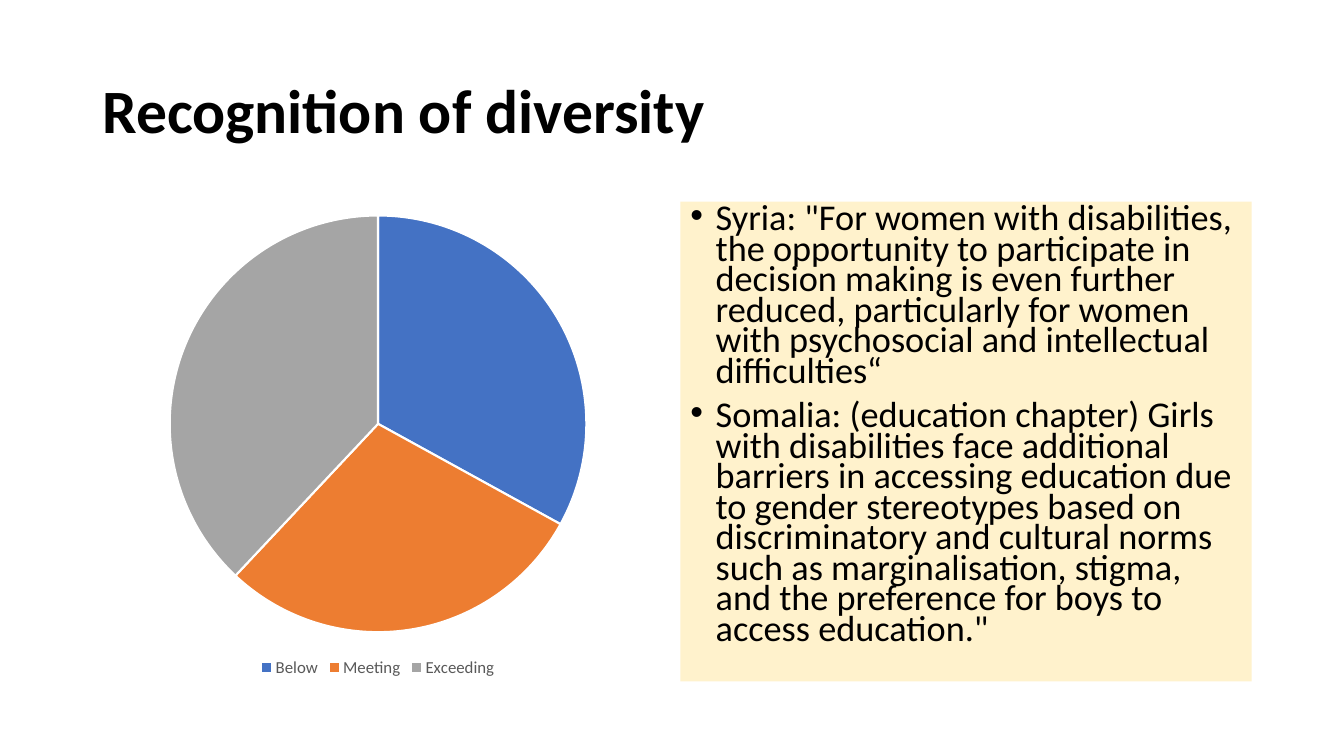
from lxml import etree
from pptx import Presentation
from pptx.chart.data import CategoryChartData
from pptx.dml.color import RGBColor
from pptx.enum.chart import XL_CHART_TYPE as ChartType, XL_LEGEND_POSITION as LegendPosition
from pptx.enum.shapes import MSO_SHAPE as Shape
from pptx.enum.text import MSO_ANCHOR as Anchor, PP_ALIGN as Align
from pptx.oxml.ns import qn
from pptx.util import Cm, Pt


def color(hex_code):
    return RGBColor.from_string(hex_code)


class SlideBuilder:
    font = "Calibri"
    ink = "000000"
    muted = "595959"
    panel = "FFF2CC"
    slice_edge = "FFFFFF"

    def __init__(self, slide):
        self.slide = slide

    def add_run(self, paragraph, text, size, bold=False):
        run = paragraph.add_run()
        run.text = text
        run.font.name = self.font
        run.font.size = Pt(size)
        run.font.bold = bold
        run.font.color.rgb = color(self.ink)

    def title(self, text, left, top, width, height):
        frame = self.slide.shapes.add_textbox(left, top, width, height).text_frame
        frame.word_wrap = True
        frame.vertical_anchor = Anchor.MIDDLE
        heading = frame.paragraphs[0]
        heading.line_spacing = 0.9
        self.add_run(heading, text, 44, bold=True)

    def pie(self, shares, left, top, width, height):
        data = CategoryChartData()
        data.categories = [name for name, _, _ in shares]
        data.add_series("Series 1", [value for _, value, _ in shares])
        chart = self.slide.shapes.add_chart(
            ChartType.PIE, left, top, width, height, data).chart
        chart.has_title = False
        chart.font.name = self.font
        chart.font.size = Pt(10)
        chart.plots[0].vary_by_categories = True
        for index, (_, _, fill) in enumerate(shares):
            wedge = chart.plots[0].series[0].points[index].format
            wedge.fill.solid()
            wedge.fill.fore_color.rgb = color(fill)
            wedge.line.color.rgb = color(self.slice_edge)
            wedge.line.width = Pt(1.5)
        chart.has_legend = True
        legend = chart.legend
        legend.position = LegendPosition.BOTTOM
        legend.include_in_layout = False
        legend.font.name = self.font
        legend.font.size = Pt(12)
        legend.font.color.rgb = color(self.muted)

    def bullet_panel(self, items, left, top, width, height):
        panel = self.slide.shapes.add_shape(Shape.RECTANGLE, left, top, width, height)
        panel.shadow.inherit = False
        panel.fill.solid()
        panel.fill.fore_color.rgb = color(self.panel)
        panel.line.fill.background()
        frame = panel.text_frame
        frame.word_wrap = True
        frame.vertical_anchor = Anchor.TOP
        for index, item in enumerate(items):
            entry = frame.add_paragraph() if index else frame.paragraphs[0]
            entry.alignment = Align.LEFT
            entry.line_spacing = 0.7
            entry.space_before = Pt(10)
            self.add_bullet(entry)
            self.add_run(entry, item, 25.9)

    def add_bullet(self, paragraph):
        indent = Cm(0.64)
        properties = paragraph._p.get_or_add_pPr()
        properties.set("marL", str(indent))
        properties.set("indent", str(-indent))
        etree.SubElement(properties, qn("a:buFont"), typeface="Arial")
        etree.SubElement(properties, qn("a:buChar"), char="•")


def main():
    deck = Presentation()
    deck.slide_width, deck.slide_height = Cm(33.87), Cm(19.05)
    builder = SlideBuilder(deck.slides.add_slide(deck.slide_layouts[6]))

    # Two equal columns under a full-width title
    margin, gap = Cm(2.33), Cm(0.42)
    content_width = deck.slide_width - 2 * margin
    column_width = (content_width - gap) // 2
    column_top, column_height = Cm(5.08), Cm(12.09)

    # Title
    builder.title("Recognition of diversity", margin, Cm(1.02), content_width, Cm(3.68))

    # Ratings
    ratings = [("Below", 33, "4472C4"), ("Meeting", 29, "ED7D31"), ("Exceeding", 38, "A5A5A5")]
    builder.pie(ratings, margin, column_top, column_width, column_height)

    # Country examples
    examples = [
        'Syria: "For women with disabilities, the opportunity to participate in '
        'decision making is even further reduced, particularly for women with '
        'psychosocial and intellectual difficulties“',
        'Somalia: (education chapter) Girls with disabilities face additional '
        'barriers in accessing education due to gender stereotypes based on '
        'discriminatory and cultural norms such as marginalisation, stigma, and '
        'the preference for boys to access education."',
    ]
    builder.bullet_panel(examples, margin + column_width + gap, column_top,
                         column_width, column_height)

    deck.save("out.pptx")


if __name__ == "__main__":
    main()
